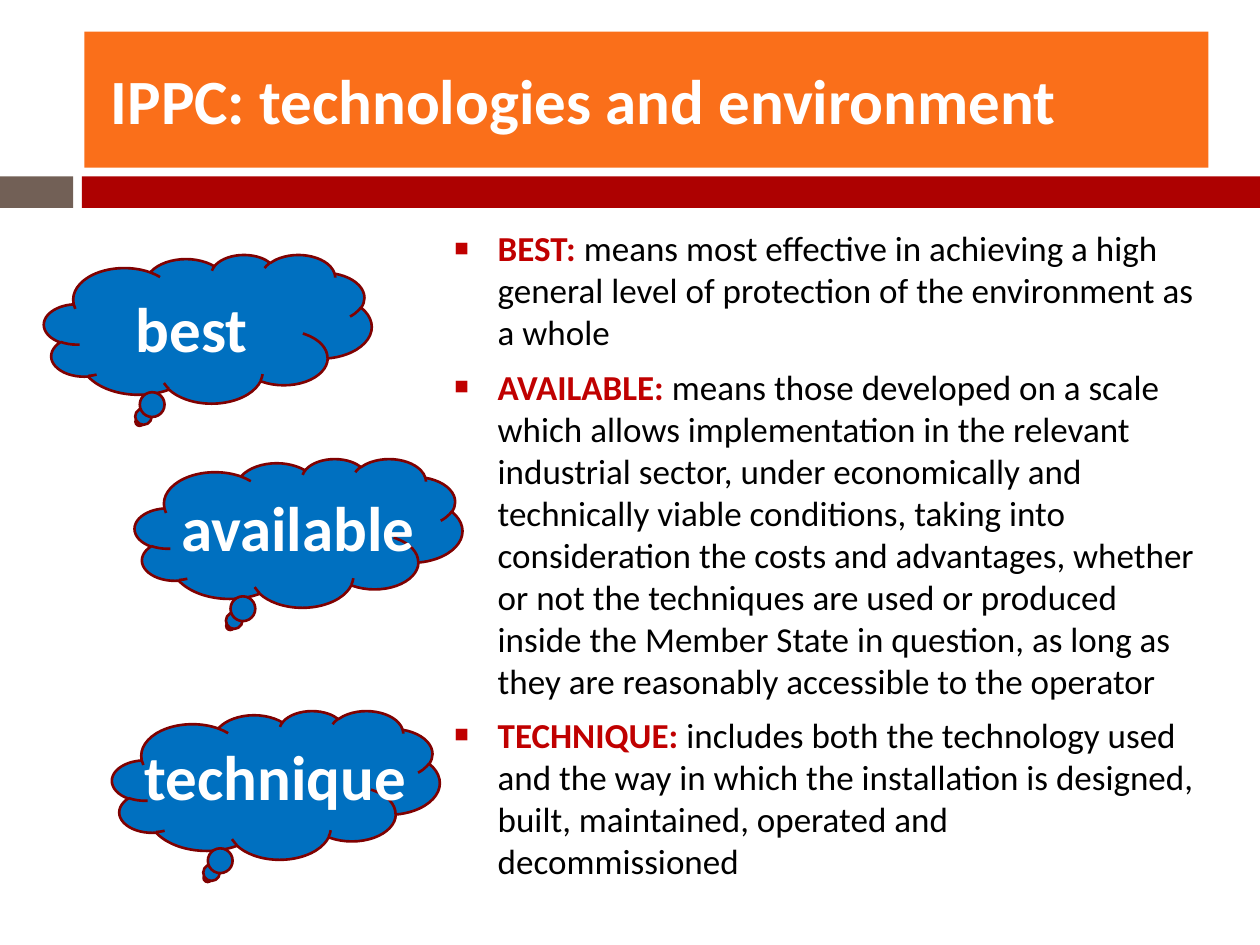
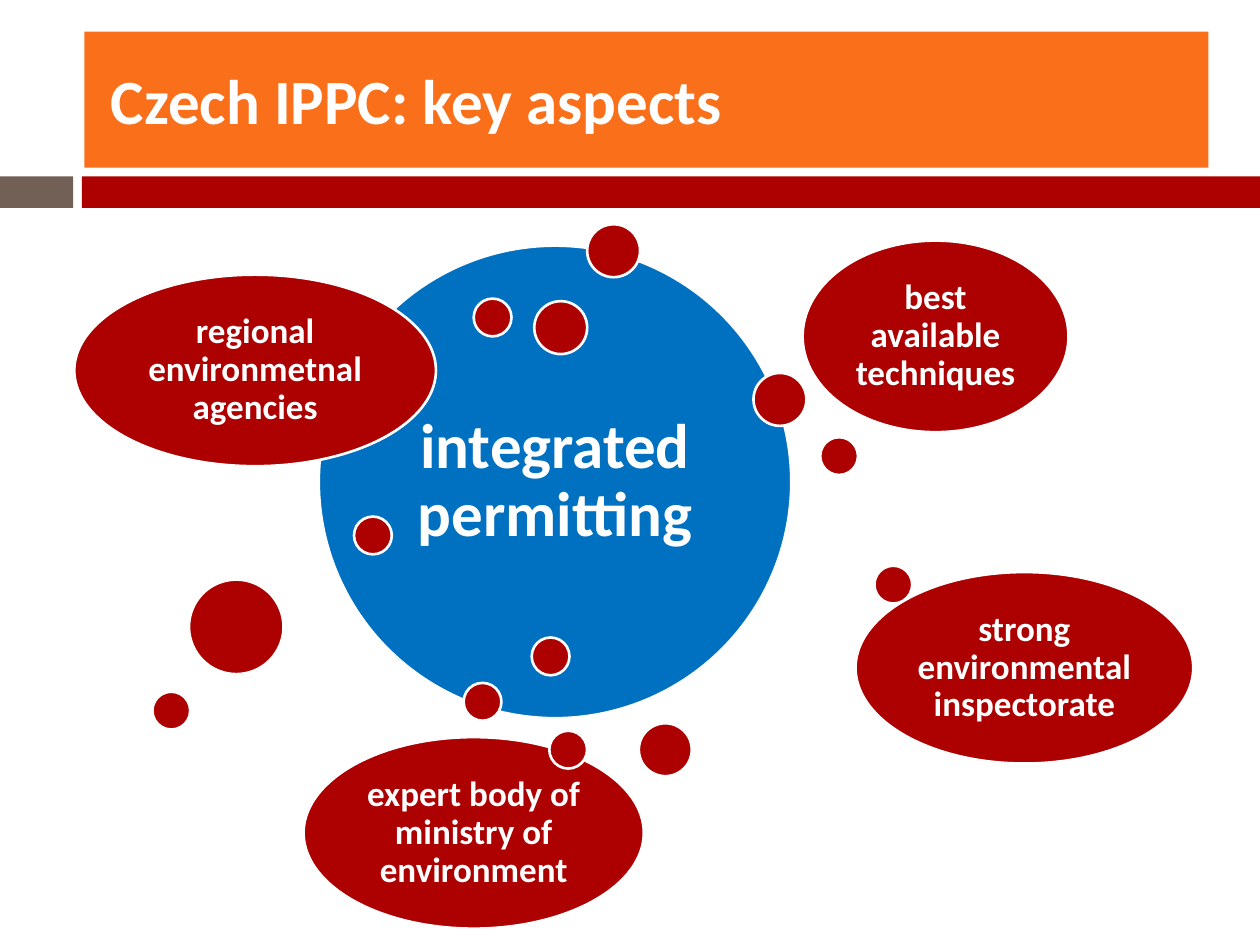
from lxml import etree
from pptx import Presentation
from pptx.dml.color import RGBColor
from pptx.enum.shapes import MSO_SHAPE
from pptx.enum.text import MSO_ANCHOR, MSO_AUTO_SIZE, PP_ALIGN
from pptx.oxml.ns import qn
from pptx.util import Inches, Pt

WHITE = RGBColor(0xFF, 0xFF, 0xFF)
BLACK = RGBColor(0x00, 0x00, 0x00)
ORANGE = RGBColor(0xFA, 0x6F, 0x1A)
RED = RGBColor(0xAD, 0x01, 0x01)
DARK_RED = RGBColor(0x80, 0x01, 0x01)
TERM_RED = RGBColor(0xC0, 0x00, 0x00)
BROWN = RGBColor(0x72, 0x60, 0x56)
BLUE = RGBColor(0x00, 0x70, 0xC0)

COLUMNS, ROWS = 100, 75
TITLE_AND_BODY, TITLE_ONLY = 1, 5
HEADING = {"name": "Calibri", "size": Pt(36), "bold": True}
BODY = {"name": "Calibri", "size": Pt(20), "bold": False}
STRONG_BODY = BODY | {"bold": True}
BUBBLE_HEIGHT = 15.2

DEFINITIONS = [
    ("BEST: ", "means most effective in achieving a high general level of "
     "protection of the environment as a whole"),
    ("AVAILABLE: ", "means those developed on a scale which allows "
     "implementation in the relevant industrial sector, under economically "
     "and technically viable conditions, taking into consideration the costs "
     "and advantages, whether or not the techniques are used or produced "
     "inside the Member State in question, as long as they are reasonably "
     "accessible to the operator"),
    ("TECHNIQUE: ", "includes both the technology used and the way in which "
     "the installation is designed, built, maintained, operated and "
     "decommissioned"),
]

# word, cloud corner, word corner and word width
CLOUDS = [
    ("best", (3.5, 20.2), (9.8, 22.5), 13.4),
    ("available", (10.7, 36.4), (13.4, 38.3), 22),
    ("technique", (8.9, 56.4), (10.5, 58), 22.8),
]

# aspect, left, top, width
ASPECTS = [
    ("regional environmetnal agencies", 5.9, 21.8, 28.7),
    ("best available techniques", 63.7, 19.1, 21.1),
    ("strong environmental inspectorate", 67.9, 45.4, 26.8),
    ("expert body of ministry of environment", 24.1, 58.5, 27),
]

# diameter: corners
DOTS = {
    3: [(36.8, 54.2), (65.1, 34.7), (37.6, 23.7), (28.1, 41), (12.1, 54.9),
        (42.2, 50.6), (69.4, 44.9), (43.6, 58)],
    4.2: [(46.6, 17.8), (50.7, 57.4), (42.4, 23.9), (59.8, 29.6)],
    7.5: [(15, 46)],
}


def apply(target, values):
    for name, value in values.items():
        setattr(target, name, value)


class Deck:
    """Holds the shared style and the slide being built, on a 100 x 75 grid."""

    def __init__(self):
        self.presentation = Presentation()
        apply(self.presentation,
              {"slide_width": Inches(10), "slide_height": Inches(7.5)})
        self.column = self.presentation.slide_width / COLUMNS
        self.row = self.presentation.slide_height / ROWS

    def box(self, left, top, width, height):
        return (round(left * self.column), round(top * self.row),
                round(width * self.column), round(height * self.row))

    def place(self, placeholder, *cells):
        names = ("left", "top", "width", "height")
        apply(placeholder, dict(zip(names, self.box(*cells))))

    def add_words(self, paragraph, words, style, color):
        run = paragraph.add_run()
        run.text = words
        apply(run.font, style)
        run.font.color.rgb = color

    def new_slide(self, layout, heading):
        layouts = self.presentation.slide_layouts
        self.slide = self.presentation.slides.add_slide(layouts[layout])
        self.shape(MSO_SHAPE.RECTANGLE, (0, 14, 5.8, 2.5), BROWN)
        self.shape(MSO_SHAPE.RECTANGLE, (6.5, 14, 93.5, 2.5), RED)
        title = self.slide.shapes.title
        self.place(title, 6.7, 2.5, 89.2, 10.8)
        title.fill.solid()
        title.fill.fore_color.rgb = ORANGE
        apply(title.text_frame, {"vertical_anchor": MSO_ANCHOR.MIDDLE,
                                 "auto_size": MSO_AUTO_SIZE.NONE,
                                 "margin_left": Inches(0.21)})
        paragraph = title.text_frame.paragraphs[0]
        paragraph.alignment = PP_ALIGN.LEFT
        self.add_words(paragraph, heading, HEADING, WHITE)

    def shape(self, preset, cells, fill, outline=None):
        shape = self.slide.shapes.add_shape(preset, *self.box(*cells))
        shape.shadow.inherit = False
        shape.fill.solid()
        shape.fill.fore_color.rgb = fill
        if outline is None:
            shape.line.fill.background()
        else:
            shape.line.color.rgb = outline
            shape.line.width = Pt(1.5)
        return shape

    def bullet(self, paragraph):
        """Give the paragraph a red square bullet and a hanging indent."""
        paragraph.space_before = Pt(7)
        properties = paragraph._p.get_or_add_pPr()
        properties.set("marL", str(Inches(0.35)))
        properties.set("indent", str(-Inches(0.35)))
        color = etree.SubElement(properties, qn("a:buClr"))
        etree.SubElement(color, qn("a:srgbClr"), val=str(TERM_RED))
        etree.SubElement(properties, qn("a:buSzPct"), val="130000")
        etree.SubElement(properties, qn("a:buFont"), typeface="Calibri")
        etree.SubElement(properties, qn("a:buChar"), char="▪")

    def definitions(self, entries, *cells):
        body = self.slide.placeholders[1]
        self.place(body, *cells)
        frame = body.text_frame
        frame.auto_size = MSO_AUTO_SIZE.NONE
        for index, (term, meaning) in enumerate(entries):
            paragraph = frame.add_paragraph() if index else frame.paragraphs[0]
            self.bullet(paragraph)
            self.add_words(paragraph, term, STRONG_BODY, TERM_RED)
            self.add_words(paragraph, meaning, BODY, BLACK)

    def cloud(self, word, cloud_corner, word_corner, word_width):
        self.shape(MSO_SHAPE.CLOUD_CALLOUT, (*cloud_corner, 26, 11.8),
                   BLUE, DARK_RED)
        label = self.slide.shapes.add_textbox(
            *self.box(*word_corner, word_width, 7.1))
        apply(label.text_frame, {"word_wrap": True,
                                 "auto_size": MSO_AUTO_SIZE.SHAPE_TO_FIT_TEXT})
        self.add_words(label.text_frame.paragraphs[0], word, HEADING, WHITE)

    def bubble(self, cells, fill=RED, words="", style=STRONG_BODY, inset=0.08):
        bubble = self.shape(MSO_SHAPE.OVAL, cells, fill, WHITE)
        if not words:
            return
        frame = bubble.text_frame
        sides = ("left", "top", "right", "bottom")
        apply(frame, {f"margin_{side}": Inches(inset) for side in sides})
        apply(frame, {"word_wrap": True, "vertical_anchor": MSO_ANCHOR.MIDDLE})
        paragraph = frame.paragraphs[0]
        apply(paragraph, {"alignment": PP_ALIGN.CENTER, "line_spacing": 0.9})
        self.add_words(paragraph, words, style, WHITE)


def main():
    deck = Deck()

    deck.new_slide(TITLE_AND_BODY, "IPPC: technologies and environment")
    deck.definitions(DEFINITIONS, 35, 17.5, 60.8, 49.2)
    for cloud in CLOUDS:
        deck.cloud(*cloud)

    deck.new_slide(TITLE_ONLY, "Czech IPPC: key aspects")
    deck.bubble((25.3, 19.5, 37.5, 37.5), BLUE, "integrated permitting",
                HEADING, 0.15)
    for aspect, left, top, width in ASPECTS:
        deck.bubble((left, top, width, BUBBLE_HEIGHT), words=aspect)
    for diameter, corners in DOTS.items():
        for corner in corners:
            deck.bubble((*corner, diameter, diameter))

    deck.presentation.save("out.pptx")


if __name__ == "__main__":
    main()
